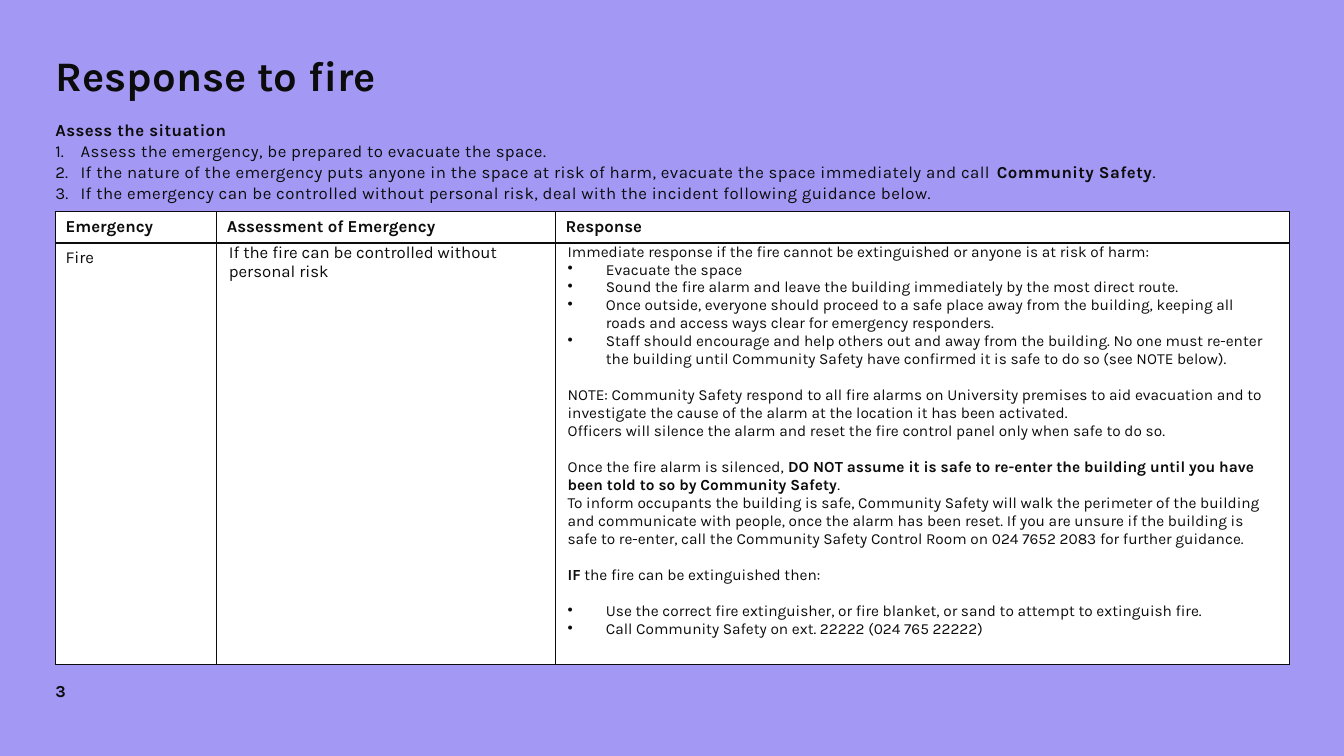
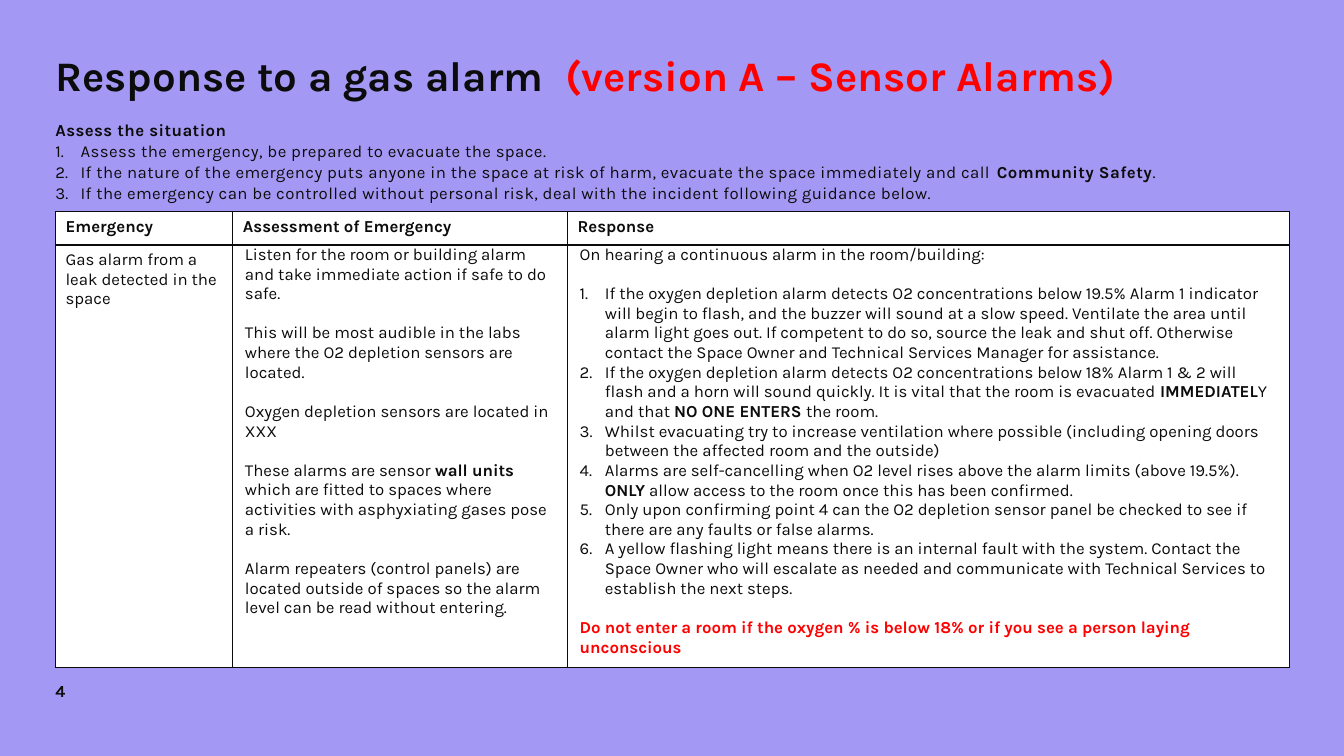
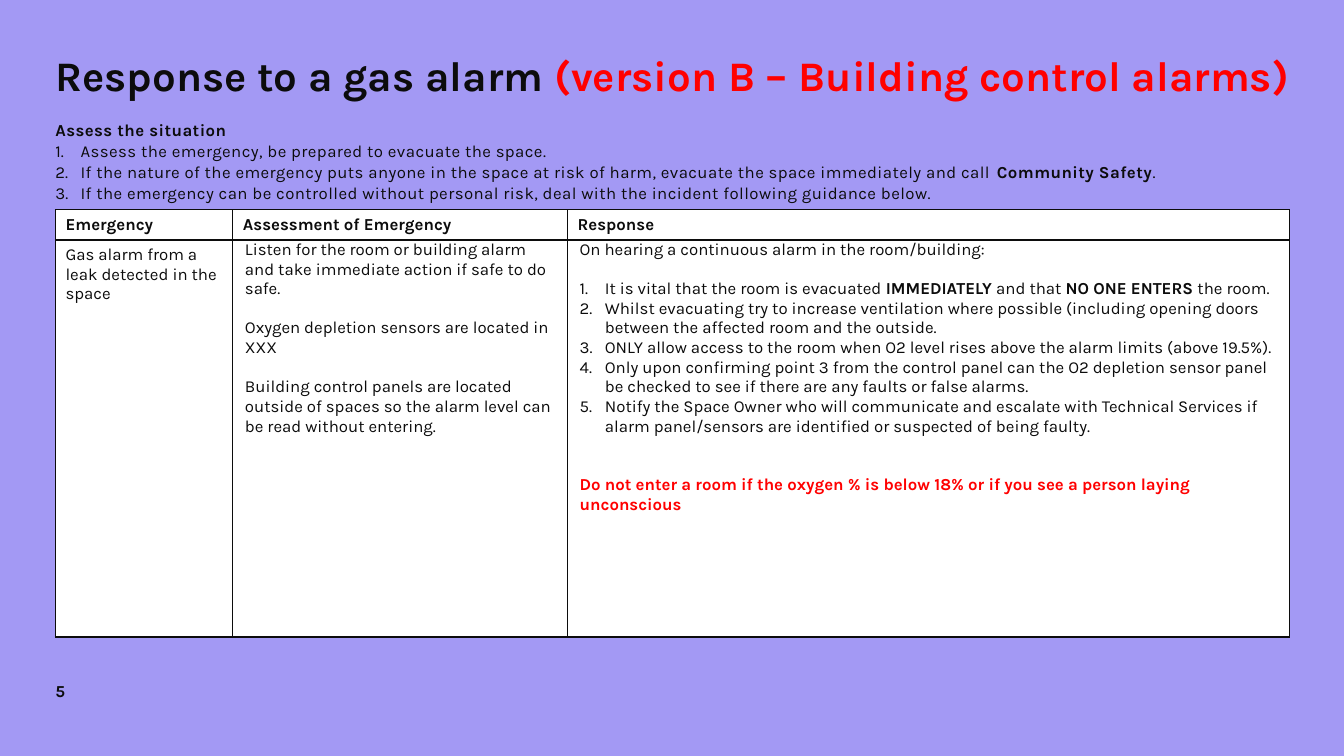
"""Build three emergency response slides with shared titles, steps and tables."""
from lxml import etree
from pptx import Presentation
from pptx.dml.color import RGBColor
from pptx.enum.text import MSO_ANCHOR
from pptx.oxml.ns import qn
from pptx.util import Inches, Pt

TOP, BOTTOM = MSO_ANCHOR.TOP, MSO_ANCHOR.BOTTOM
COLORS = {"bg": "A399F4", "ink": "0C0C0C", "red": "FF0000", "white": "FFFFFF"}
FONT = "Karla"
LEFT, WIDTH = 0.55, 12.24
GAP, SMALL_GAP = 14, 12.9
HEADERS = ["Emergency", "Assessment of Emergency", "Response"]
NUMBER = {"mark": "1.", "indent": 0.25}
BULLET = {"mark": "•", "indent": 0.38, "size": 11}
SMALL = {"size": 11}
SPACED = {"before": GAP}
SMALL_SPACED = {"size": 11, "before": SMALL_GAP}

STEPS = [
    "Assess the emergency, be prepared to evacuate the space.",
    "If the nature of the emergency puts anyone in the space at risk of harm, evacuate the space "
    "immediately and call **Community Safety**.",
    "If the emergency can be controlled without personal risk, deal with the incident following "
    "guidance below.",
]

GAS = [("Gas alarm from a leak detected in the space", {})]
LISTEN = ("Listen for the room or building alarm and take immediate action if safe to do safe.", {})
SENSORS = ("Oxygen depletion sensors are located in XXX", SPACED)
HEARING = ("On hearing a continuous alarm in the room/building:", {})
WARNING = "Do not enter a room if the oxygen % is below 18% or if you see a person laying unconscious"

FIRE_RESPONSE = [
    ("Immediate response if the fire cannot be extinguished or anyone is at risk of harm:", SMALL),
    ("Evacuate the space", BULLET),
    ("Sound the fire alarm and leave the building immediately by the most direct route.", BULLET),
    ("Once outside, everyone should proceed to a safe place away from the building, keeping all "
     "roads and access ways clear for emergency responders.", BULLET),
    ("Staff should encourage and help others out and away from the building. No one must re-enter "
     "the building until Community Safety have confirmed it is safe to do so (see NOTE below).",
     BULLET),
    ("NOTE: Community Safety respond to all fire alarms on University premises to aid evacuation "
     "and to investigate the cause of the alarm at the location it has been activated.",
     SMALL_SPACED),
    ("Officers will silence the alarm and reset the fire control panel only when safe to do so.",
     SMALL),
    ("Once the fire alarm is silenced, **DO NOT assume it is safe to re-enter the building until "
     "you have been told to so by Community Safety**.", SMALL_SPACED),
    ("To inform occupants the building is safe, Community Safety will walk the perimeter of the "
     "building and communicate with people, once the alarm has been reset. If you are unsure if "
     "the building is safe to re-enter, call the Community Safety Control Room on 024 7652 2083 "
     "for further guidance.", SMALL),
    ("**IF** the fire can be extinguished then:", SMALL_SPACED),
    ("Use the correct fire extinguisher, or fire blanket, or sand to attempt to extinguish fire.",
     {**BULLET, "before": SMALL_GAP}),
    ("Call Community Safety on ext. 22222 (024 765 22222)", BULLET),
]

SENSOR_STEPS = [
    "If the oxygen depletion alarm detects O2 concentrations below 19.5% Alarm 1 indicator will "
    "begin to flash, and the buzzer will sound at a slow speed. Ventilate the area until alarm "
    "light goes out. If competent to do so, source the leak and shut off. Otherwise contact the "
    "Space Owner and Technical Services Manager for assistance.",
    "If the oxygen depletion alarm detects O2 concentrations below 18% Alarm 1 & 2 will flash and "
    "a horn will sound quickly. It is vital that the room is evacuated **IMMEDIATEL**Y and that "
    "**NO ONE ENTERS **the room.",
    "Whilst evacuating try to increase ventilation where possible (including opening doors "
    "between the affected room and the outside)",
    "Alarms are self-cancelling when O2 level rises above the alarm limits (above 19.5%). "
    "**ONLY** allow access to the room once this has been confirmed.",
    "Only upon confirming point 4 can the O2 depletion sensor panel be checked to see if there "
    "are any faults or false alarms.",
    "A yellow flashing light means there is an internal fault with the system. Contact the Space "
    "Owner who will escalate as needed and communicate with Technical Services to establish the "
    "next steps.",
]

BUILDING_STEPS = [
    "It is vital that the room is evacuated **IMMEDIATELY** and that **NO ONE ENTERS **the room.",
    "Whilst evacuating try to increase ventilation where possible (including opening doors "
    "between the affected room and the outside.",
    "ONLY allow access to the room when O2 level rises above the alarm limits (above 19.5%).",
    "Only upon confirming point 3 from the control panel can the O2 depletion sensor panel be "
    "checked to see if there are any faults or false alarms.",
    "Notify the Space Owner who will communicate and escalate with Technical Services if alarm "
    "panel/sensors are identified or suspected of being faulty.",
]


def gas_response(steps, warning_gap):
    """Return the response paragraphs of a gas alarm: intro, numbered steps, warning."""
    first = (steps[0], {**NUMBER, **SPACED})
    rest = [(step, NUMBER) for step in steps[1:]]
    warning = (WARNING, {"color": "red", "bold": True, "before": warning_gap})
    return [HEARING, first, *rest, warning]


SLIDES = [
    {
        "title": [("Response to fire", {})],
        "top": 2.1, "cols": [1.6, 3.36, 7.28], "rows": [0.31, 4.18],
        "cells": [
            [("Fire", {})],
            [("If the fire can be controlled without personal risk", {})],
            FIRE_RESPONSE,
        ],
    },
    {
        "title": [("Response to a gas alarm", {}), (" ", {"spacing": 7.6}),
                  ("(version A – Sensor Alarms)", {"color": "red"})],
        "top": 2.1, "cols": [1.76, 3.32, 7.16], "rows": [0.33, 4.13],
        "cells": [
            GAS,
            [
                LISTEN,
                ("This will be most audible in the labs where the O2 depletion sensors are "
                 "located.", SPACED),
                SENSORS,
                ("These alarms are sensor **wall units **which are fitted to spaces where "
                 "activities with asphyxiating gases pose a risk.", SPACED),
                ("Alarm repeaters (control panels) are located outside of spaces so the alarm "
                 "level can be read without entering.", SPACED),
            ],
            gas_response(SENSOR_STEPS, GAP),
        ],
    },
    {
        "title": [("Response to a gas alarm ", {}),
                  ("(version B – Building control alarms)", {"color": "red"})],
        "top": 2.08, "cols": [1.76, 3.32, 7.16], "rows": [0.3, 3.94],
        "cells": [
            GAS,
            [
                LISTEN,
                SENSORS,
                ("Building control panels are located outside of spaces so the alarm level can "
                 "be read without entering.", SPACED),
            ],
            gas_response(BUILDING_STEPS, 2 * GAP),
        ],
    },
]


def rgb(name):
    """Look up a named colour."""
    return RGBColor.from_string(COLORS[name])


def add_run(p, text, size=12, bold=False, color="ink", spacing=0):
    """Append one formatted run to a paragraph."""
    r = p.add_run()
    r.text = text
    r.font.name, r.font.size, r.font.bold = FONT, Pt(size), bold
    r.font.color.rgb = rgb(color)
    if spacing:
        r.font._element.set("spc", str(round(spacing * 100)))


def add_text(tf, text, mark=None, indent=0, before=0, line=None, bold=False, **fmt):
    """Append a paragraph in which ** switches bold on and off."""
    p = tf.paragraphs[0]
    if p.runs:
        p = tf.add_paragraph()
    if mark:
        pPr = p._p.get_or_add_pPr()
        pPr.set("marL", str(Inches(indent)))
        pPr.set("indent", str(-Inches(indent)))
        if mark == "1.":
            etree.SubElement(pPr, qn("a:buAutoNum"), type="arabicPeriod")
        else:
            etree.SubElement(pPr, qn("a:buChar"), char=mark)
    p.space_before = Pt(before)
    if line:
        p.line_spacing = line
    for i, part in enumerate(text.split("**")):
        if part:
            add_run(p, part, bold=bold or i % 2 == 1, **fmt)


def add_box(s, left, top, width, height, anchor=TOP):
    """Add a wrapped text box without insets and return its text frame."""
    tf = s.shapes.add_textbox(Inches(left), Inches(top), Inches(width), Inches(height)).text_frame
    tf.word_wrap = True
    tf.vertical_anchor = anchor
    tf.margin_left = tf.margin_right = tf.margin_top = tf.margin_bottom = 0
    return tf


def add_title(s, parts):
    """Add the slide title from its runs."""
    p = add_box(s, LEFT, 0.59, WIDTH, 0.42).paragraphs[0]
    p.line_spacing = 0.8
    for text, fmt in parts:
        add_run(p, text, size=30, bold=True, **fmt)


def add_steps(s):
    """Add the assessment heading and its numbered steps."""
    tf = add_box(s, LEFT, 1.18, WIDTH, 0.62)
    add_text(tf, "Assess the situation", bold=True, line=1.04, spacing=0.3)
    for step in STEPS:
        add_text(tf, step, line=1.04, spacing=0.3, **NUMBER)


def style_cell(cell):
    """Give a table cell its white fill and thin dark borders."""
    tcPr = cell._tc.get_or_add_tcPr()
    for side in ("L", "R", "T", "B"):
        ln = etree.SubElement(tcPr, qn("a:ln" + side), w=str(Pt(1)))
        fill = etree.SubElement(ln, qn("a:solidFill"))
        etree.SubElement(fill, qn("a:srgbClr"), val=COLORS["ink"])
    cell.fill.solid()
    cell.fill.fore_color.rgb = rgb("white")


def add_response_table(s, top, cols, rows, cells):
    """Add the table of emergency, assessment and response."""
    table = s.shapes.add_table(2, 3, Inches(LEFT), Inches(top), Inches(sum(cols)),
                               Inches(sum(rows))).table
    for row, height in zip(table.rows, rows):
        row.height = Inches(height)
    for i, width in enumerate(cols):
        table.columns[i].width = Inches(width)
        head, body = table.cell(0, i), table.cell(1, i)
        style_cell(head)
        style_cell(body)
        add_text(head.text_frame, HEADERS[i], bold=True)
        if i:
            body.margin_left = body.margin_right = Inches(0.12)
            body.margin_top = body.margin_bottom = 0
        for text, fmt in cells[i]:
            add_text(body.text_frame, text, **fmt)


def main():
    """Build and save the presentation."""
    prs = Presentation()
    prs.slide_width, prs.slide_height = Inches(13.33), Inches(7.5)
    for number, content in enumerate(SLIDES, start=3):
        s = prs.slides.add_slide(prs.slide_layouts[6])
        s.background.fill.solid()
        s.background.fill.fore_color.rgb = rgb("bg")
        add_steps(s)
        add_title(s, content["title"])
        add_text(add_box(s, LEFT, 6.56, 0.39, 0.39, BOTTOM), str(number), bold=True)
        add_response_table(s, content["top"], content["cols"], content["rows"], content["cells"])
    prs.save("out.pptx")


if __name__ == "__main__":
    main()
